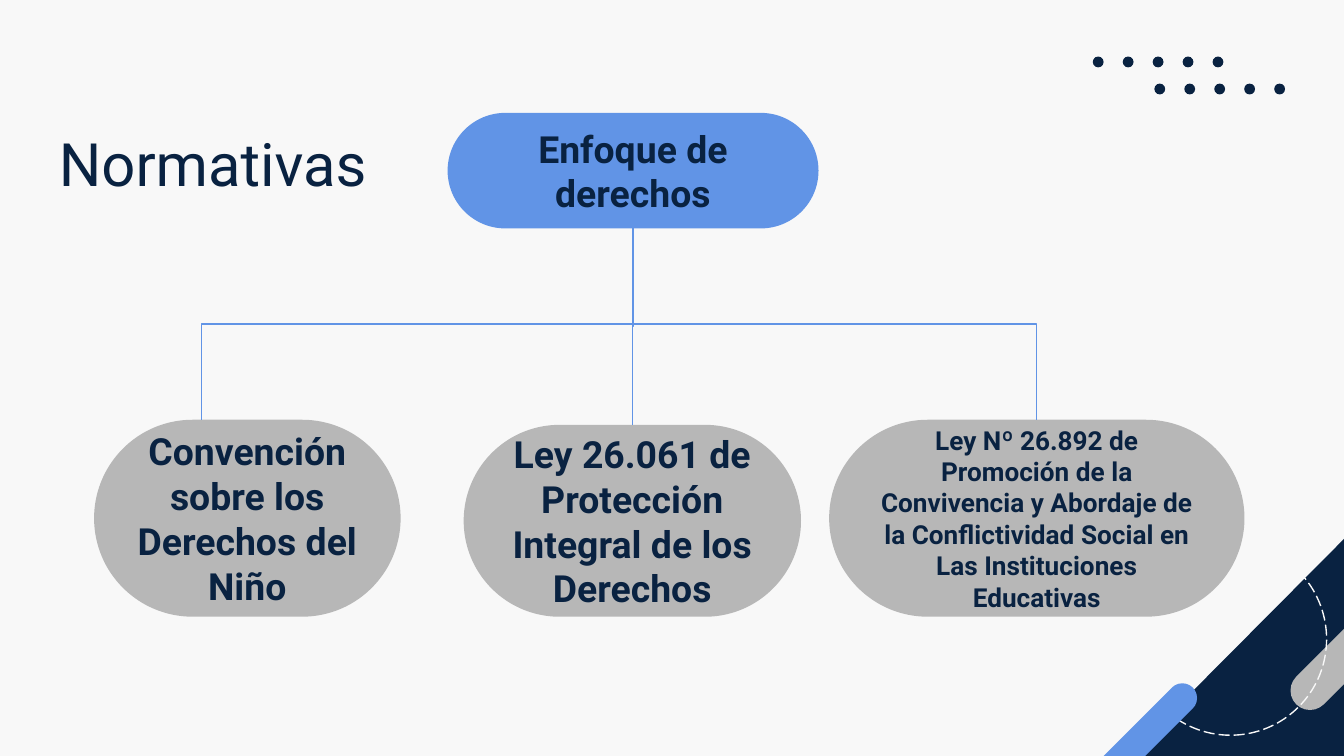
from dataclasses import dataclass

from lxml.etree import SubElement
from pptx import Presentation
from pptx.dml.color import RGBColor
from pptx.enum.dml import MSO_LINE
from pptx.enum.shapes import MSO_CONNECTOR as Connector, MSO_SHAPE as Shape
from pptx.enum.text import MSO_ANCHOR as Anchor, PP_ALIGN as Align
from pptx.oxml.ns import qn
from pptx.util import Pt


@dataclass(frozen=True)
class Theme:
    font: str = "Roboto"
    paper: str = "F8F8F8"
    navy: str = "092241"
    blue: str = "6194E6"
    grey: str = "B7B7B7"
    title: int = 32
    body: int = 20
    small: int = 14
    line: float = 0.75


class SlideBuilder:
    """Draws styled elements on the current slide."""

    def __init__(self, slide, theme):
        self.slide = slide
        self.theme = theme

    def background(self):
        fill = self.slide.background.fill
        fill.solid()
        fill.fore_color.rgb = RGBColor.from_string(self.theme.paper)

    def shape(self, kind, box, color=None, rotation=0):
        shape = self.slide.shapes.add_shape(kind, *map(Pt, box))
        shape.shadow.inherit = False
        shape.rotation = rotation
        shape.line.fill.background()
        if color:
            shape.fill.solid()
            shape.fill.fore_color.rgb = RGBColor.from_string(color)
        else:
            shape.fill.background()
        return shape

    def pill(self, box, color, rotation=0):
        shape = self.shape(Shape.ROUNDED_RECTANGLE, box, color, rotation)
        shape.adjustments[0] = 0.5
        return shape

    def dashed_circle(self, box):
        line = self.shape(Shape.OVAL, box).line
        line.color.rgb = RGBColor.from_string(self.theme.paper)
        line.width = Pt(self.theme.line)
        line.dash_style = MSO_LINE.LONG_DASH

    def label(self, shape, text, size, bold, align, anchor):
        frame = shape.text_frame
        frame.word_wrap = True
        frame.vertical_anchor = anchor
        frame.margin_left = frame.margin_right = Pt(7.2)
        frame.margin_top = frame.margin_bottom = Pt(7.2)
        paragraph = frame.paragraphs[0]
        paragraph.text = text
        paragraph.alignment = align
        font = paragraph.font
        font.name, font.size, font.bold = self.theme.font, Pt(size), bold
        font.color.rgb = RGBColor.from_string(self.theme.navy)

    def title(self, box, text):
        shape = self.slide.shapes.add_textbox(*map(Pt, box))
        self.label(shape, text, self.theme.title, False, Align.LEFT, Anchor.TOP)

    def node(self, box, text, size, color):
        self.label(self.pill(box, color), text, size, True, Align.CENTER, Anchor.MIDDLE)

    def branch(self, start_x, start_y, end_x, end_y):
        center_x, center_y = (start_x + end_x) / 2, (start_y + end_y) / 2
        half_drop, half_span = (end_y - start_y) / 2, abs(end_x - start_x) / 2
        rightward = end_x > start_x
        side = -1 if rightward else 1
        connector = self.slide.shapes.add_connector(
            Connector.ELBOW,
            Pt(center_x - side * half_drop), Pt(center_y - half_span),
            Pt(center_x + side * half_drop), Pt(center_y + half_span),
        )
        properties = connector.element.spPr
        properties.find(qn("a:xfrm")).set("rot", "16200000" if rightward else "5400000")
        connector.line.color.rgb = RGBColor.from_string(self.theme.blue)
        connector.line.width = Pt(self.theme.line)
        SubElement(properties, qn("a:effectLst"))


def main():
    theme = Theme()
    presentation = Presentation()
    presentation.slide_width, presentation.slide_height = Pt(720), Pt(405)
    slide = presentation.slides.add_slide(presentation.slide_layouts[6])
    builder = SlideBuilder(slide, theme)
    builder.background()

    for row_left, row_top in ((618.4, 44.8), (585.4, 30.3)):
        for column in range(5):
            builder.shape(Shape.OVAL, (row_left + 16.05 * column, row_top, 5.8, 5.8), theme.navy)

    builder.shape(Shape.RIGHT_TRIANGLE, (602.6, 284.4, 122.4, 121.7), theme.navy, 270)
    builder.pill((681.1, 334.8, 90.7, 20.9), theme.grey, 135)
    builder.dashed_circle((607.7, 290.9, 103, 103))
    builder.pill((565.2, 391, 86.4, 15.8), theme.blue, 135)

    builder.title((24.5, 60.5, 198.7, 45.4), "Normativas")
    root_left, root_top, root_width, root_height = root = (239.8, 60.5, 198.7, 61.9)
    builder.node(root, "Enfoque de derechos", theme.body, theme.blue)

    laws = (
        ((50.4, 224.9, 164.2, 105.5), 108,
         "Convención sobre los Derechos del Niño", theme.body),
        ((248.4, 227.6, 180.7, 102.8), 338.8,
         "Ley 26.061 de Protección Integral de los Derechos", theme.body),
        ((444.2, 224.9, 222.5, 105.5), 555.4,
         "Ley Nº 26.892 de Promoción de la Convivencia y Abordaje de la "
         "Conflictividad Social en Las Instituciones Educativas", theme.small),
    )
    for box, branch_x, text, size in laws:
        builder.node(box, text, size, theme.grey)
        builder.branch(root_left + root_width / 2, root_top + root_height, branch_x, box[1])

    presentation.save("out.pptx")


if __name__ == "__main__":
    main()
